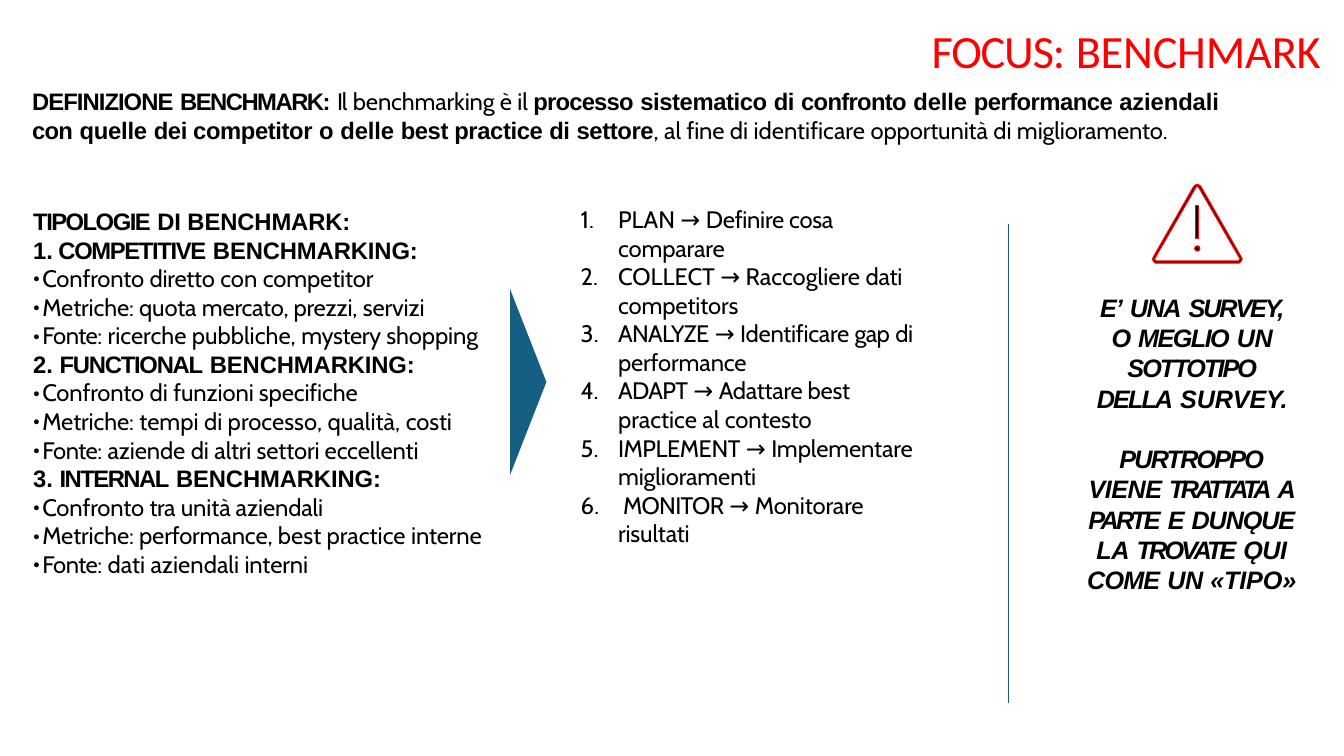
from dataclasses import dataclass
from typing import NamedTuple, Optional

from lxml.etree import SubElement
from pptx import Presentation
from pptx.dml.color import RGBColor
from pptx.enum.shapes import MSO_CONNECTOR, MSO_SHAPE
from pptx.enum.text import MSO_ANCHOR, MSO_AUTO_SIZE, PP_ALIGN
from pptx.oxml.ns import qn
from pptx.util import Pt

PX = 9144  # EMU per px, 100 px to the inch
INK = {"black": "000000", "red": "FF0000", "blue": "155F82"}


class Box(NamedTuple):
    left: int
    top: int
    width: int
    height: int


class Bit(NamedTuple):
    text: str
    gap: float = 0  # letter spacing in points, not applied to the last space
    bold: Optional[bool] = None


@dataclass
class Line:
    bits: list[Bit]
    face: str = "Cabin"
    size: int = 17
    ink: str = "black"
    bold: bool = False
    slant: bool = False
    left: int = 1
    first: int = 0
    before: float = 0
    align: PP_ALIGN = PP_ALIGN.LEFT
    mark: str = ""
    start: int = 1


def emu(box: Box) -> list[int]:
    return [side * PX for side in box]


def color(name: str) -> RGBColor:
    return RGBColor.from_string(INK[name])


def split(bit: Bit) -> list[Bit]:
    word = bit.text.rstrip()
    if word == bit.text or not bit.gap:
        return [bit]
    return [Bit(word, bit.gap, bit.bold), Bit(" ", 0, bit.bold)]


def write(shape, lines: list[Line]) -> None:
    frame = shape.text_frame
    frame.word_wrap = True
    frame.auto_size = MSO_AUTO_SIZE.SHAPE_TO_FIT_TEXT
    frame.margin_left = frame.margin_right = frame.margin_bottom = 0
    frame.margin_top = PX
    for index, line in enumerate(lines):
        para = frame.add_paragraph() if index else frame.paragraphs[0]
        para.alignment = line.align
        para.space_before = Pt(line.before)
        props = para._p.get_or_add_pPr()
        props.set("marL", str(line.left * PX))
        props.set("indent", str(line.first * PX))
        if line.mark == "1.":
            SubElement(props, qn("a:buAutoNum"), type="arabicPeriod", startAt=str(line.start))
        elif line.mark:
            SubElement(props, qn("a:buSzPct"), val="94000")
            SubElement(props, qn("a:buFont"), typeface=line.face)
            SubElement(props, qn("a:buChar"), char=line.mark)
        else:
            SubElement(props, qn("a:buNone"))
        font = para.font
        font.size, font.italic = Pt(line.size), line.slant
        font.color.rgb = color(line.ink)
        mixed = any(bit.bold is not None for bit in line.bits)
        if not mixed:
            font.name, font.bold = line.face, line.bold
        for bit in (part for whole in line.bits for part in split(whole)):
            run = para.add_run()
            run.text = bit.text
            run._r.get_or_add_rPr().set("spc", str(round(bit.gap * 100)))
            if mixed:
                run.font.bold = bit.bold
                run.font.name = "Arial" if bit.bold else "Cabin"


def label(shapes, box: Box, lines: list[Line]) -> None:
    write(shapes.add_textbox(*emu(box)), lines)


def paint(shape, fill: str, edge: str = "") -> None:
    shape.shadow.inherit = False
    shape.fill.solid()
    shape.fill.fore_color.rgb = color(fill)
    if edge:
        shape.line.color.rgb = color(edge)
        shape.line.width = Pt(0.86)
    else:
        shape.line.fill.background()


def outline(shapes, loops: list[list[tuple[int, int]]]):
    pen = shapes.build_freeform(*loops[0][0], scale=PX)
    pen.add_line_segments(loops[0][1:], close=True)
    for loop in loops[1:]:
        pen.move_to(*loop[0])
        pen.add_line_segments(loop[1:], close=True)
    return pen.convert_to_shape()


def mirror(half: list[tuple[int, int]]) -> list[tuple[int, int]]:
    return half + [(2375 - x, y) for x, y in reversed(half)]


def head(*bits: Bit, **more) -> Line:
    return Line(list(bits), face="Arial", bold=True, **more)


def point(*bits: Bit) -> Line:
    return Line(list(bits), left=10, first=-9, mark="•")


def note(*bits: Bit) -> Line:
    return head(*bits, size=18, slant=True, before=1, align=PP_ALIGN.CENTER)


# Texts
TITLE = Line([Bit("FOCUS: ", -0.8), Bit("BENCHMARK", -0.1)], face="Calibri", size=33,
             ink="red", before=1, align=PP_ALIGN.RIGHT)

MEANING = [
    Line([Bit("DEFINIZIONE ", -0.7, True), Bit("BENCHMARK: ", -1.1, True),
          Bit("Il ", -0.8, False), Bit("benchmarking è ", -0.1, False), Bit("il ", 0, False),
          Bit("processo ", -0.6, True), Bit("sistematico ", -0.3, True), Bit("di ", -0.4, True),
          Bit("confronto ", -0.5, True), Bit("delle ", -0.1, True),
          Bit("performance ", -0.4, True), Bit("aziendali", -0.1, True)], before=1.1),
    Line([Bit("con ", -0.6, True), Bit("quelle ", -0.2, True), Bit("dei competitor ", -0.3, True),
          Bit("o ", -0.7, True), Bit("delle ", -0.1, True), Bit("best practice ", -0.3, True),
          Bit("di ", -0.4, True), Bit("settore", -0.3, True), Bit(", ", -0.3, False),
          Bit("al ", 0, False), Bit("fine ", -0.1, False), Bit("di identificare ", 0, False),
          Bit("opportunità ", -0.1, False), Bit("di ", 0, False),
          Bit("miglioramento.", -0.1, False)], before=0.1),
]

TYPES = [
    head(Bit("TIPOLOGIE ", -1.1), Bit("DI BENCHMARK:", -0.1), before=1.1),
    head(Bit("COMPETITIVE ", -1), Bit("BENCHMARKING:", -0.1), left=26, first=-25, mark="1."),
    point(Bit("Confronto ", -0.1), Bit("diretto ", -0.2), Bit("con "), Bit("competitor", -0.1)),
    point(Bit("Metriche: quota ", -0.1), Bit("mercato, prezzi, ", -0.2), Bit("servizi", -0.1)),
    point(Bit("Fonte: ", -0.4), Bit("ricerche pubbliche, "), Bit("mystery ", -0.3),
          Bit("shopping", -0.1)),
    head(Bit("2. ", -0.1), Bit("FUNCTIONAL ", -0.9), Bit("BENCHMARKING:", -0.1)),
    point(Bit("Confronto ", -0.1), Bit("di "), Bit("funzioni specifiche", -0.1)),
    point(Bit("Metriche: ", -0.1), Bit("tempi di processo, qualità, "), Bit("costi", -0.1)),
    point(Bit("Fonte: ", -0.4), Bit("aziende ", -0.1), Bit("di "),
          Bit("altri settori eccellenti", -0.1)),
    head(Bit("3. ", -0.1), Bit("INTERNAL ", -1.1), Bit("BENCHMARKING:", -0.1)),
    point(Bit("Confronto ", -0.1), Bit("tra ", -0.4), Bit("unità aziendali", -0.1)),
    point(Bit("Metriche: performance, ", -0.1), Bit("best practice "), Bit("interne", -0.1)),
    point(Bit("Fonte: ", -0.4), Bit("dati aziendali "), Bit("interni", -0.1)),
]

# Each step: verb, rest of its first row, second row
STEPS = [
    (Bit("PLAN "), [Bit("Definire cosa", -0.2)], [Bit("comparare", -0.1)]),
    (Bit("COLLECT "), [Bit("Raccogliere "), Bit("dati", -0.2)], [Bit("competitors", -0.1)]),
    (Bit("ANALYZE ", -0.5), [Bit("Identificare ", -0.2), Bit("gap ", -0.5), Bit("di", -0.2)],
     [Bit("performance", -0.1)]),
    (Bit("ADAPT ", -0.5), [Bit("Adattare best", -0.2)],
     [Bit("practice al "), Bit("contesto", -0.1)]),
    (Bit("IMPLEMENT ", -0.3), [Bit("Implementare", -0.1)], [Bit("miglioramenti", -0.1)]),
    (Bit("MONITOR ", -0.5), [Bit("Monitorare", -0.1)], [Bit("risultati", -0.1)]),
]

SURVEY = note(Bit("E’ ", -0.8), Bit("UNA ", -1), Bit("SURVEY, ", -1.5), Bit("O ", -0.5),
              Bit("MEGLIO ", -1.1), Bit("UN ", -0.2), Bit("SOTTOTIPO ", -1.4),
              Bit("DELLA ", -1.4), Bit("SURVEY.", -0.1))
APART = note(Bit("PURTROPPO ", -1.3), Bit("VIENE ", -0.4), Bit("TRATTATA ", -2.5), Bit("A "),
             Bit("PARTE ", -1.9), Bit("E ", -0.5), Bit("DUNǪUE ", -0.8), Bit("LA ", -0.2),
             Bit("TROVATE ", -2), Bit("ǪUI ", -0.4), Bit("COME ", -0.6), Bit("UN ", -0.3),
             Bit("«TIPO»", -0.1))


def steps() -> list[Line]:
    lines = []
    for number, (verb, rest, tail) in enumerate(STEPS, 1):
        left = 44 if number == len(STEPS) else 39
        lines.append(Line([verb, Bit("→ "), *rest], left=left, first=2 - left, mark="1.",
                          start=number, before=1.1 if number == 1 else 0))
        lines.append(Line(tail, left=39))
    return lines


def main() -> None:
    deck = Presentation()
    deck.slide_width, deck.slide_height = 1333 * PX, 750 * PX
    shapes = deck.slides.add_slide(deck.slide_layouts[5]).shapes
    # Title
    title = shapes.title
    title.left, title.top, title.width, title.height = emu(Box(890, 20, 420, 58))
    write(title, [TITLE])
    title.text_frame.vertical_anchor = MSO_ANCHOR.MIDDLE
    # Text columns
    label(shapes, Box(31, 85, 1179, 60), MEANING)
    label(shapes, Box(32, 204, 460, 402), TYPES)
    label(shapes, Box(574, 202, 407, 345), steps())
    label(shapes, Box(1077, 289, 210, 123), [SURVEY])
    label(shapes, Box(1074, 439, 215, 153), [APART])
    # Pointer between the columns
    paint(outline(shapes, [[(506, 287), (506, 471), (542, 379)]]), "blue")
    # Warning sign
    rim = mirror([(1188, 183), (1190, 184), (1191, 185), (1231, 255), (1232, 257),
                  (1231, 259), (1229, 261), (1227, 261)])
    hole = mirror([(1188, 185), (1189, 186), (1230, 257), (1228, 259)])
    paint(outline(shapes, [rim, hole]), "black", "red")
    for kind, box in ((MSO_SHAPE.OVAL, Box(1185, 244, 5, 5)),
                      (MSO_SHAPE.RECTANGLE, Box(1186, 204, 3, 33))):
        paint(shapes.add_shape(kind, *emu(box)), "black", "red")
    # Divider
    rule = shapes.add_connector(MSO_CONNECTOR.STRAIGHT, *emu(Box(1000, 222, 1000, 697)))
    rule.line.color.rgb = color("blue")
    rule.line.width = Pt(1)
    SubElement(rule._element.spPr, qn("a:effectLst"))
    deck.save("out.pptx")


if __name__ == "__main__":
    main()
